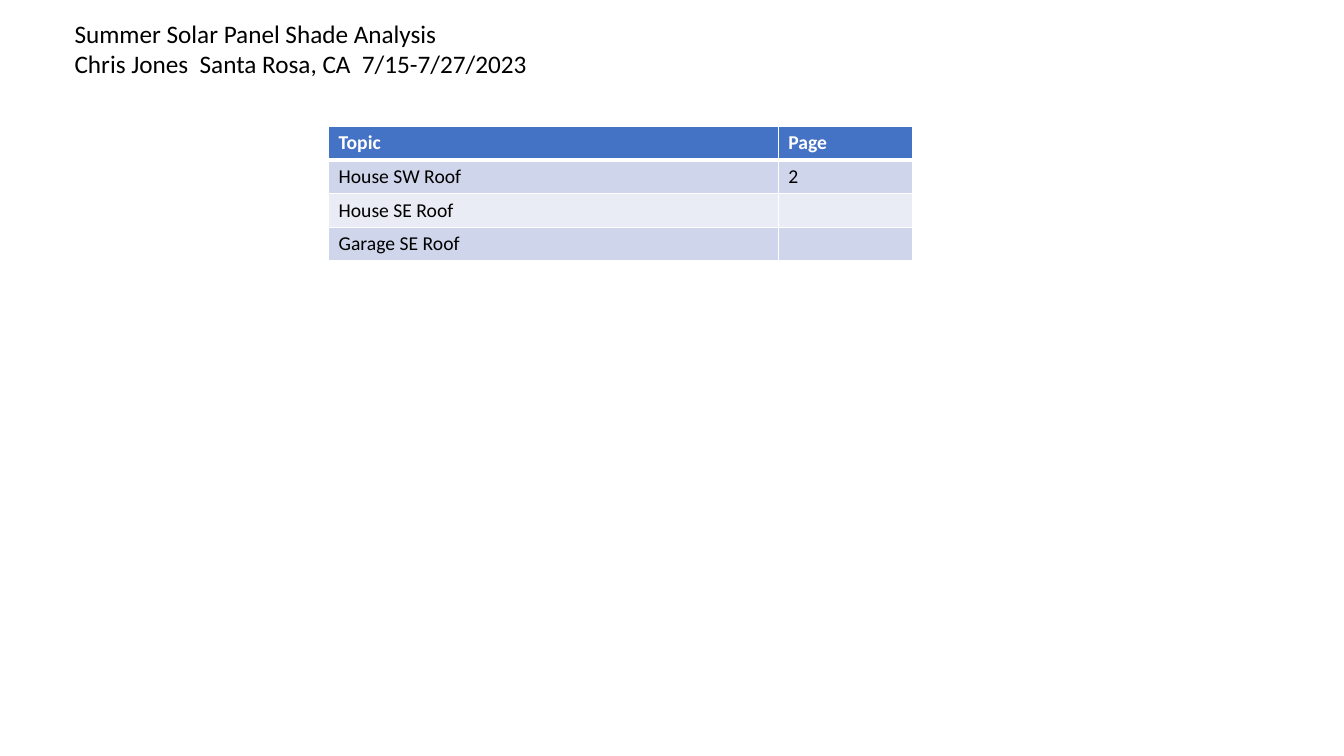
from dataclasses import dataclass

from lxml import etree
from pptx import Presentation, util as u
from pptx.dml.color import RGBColor
from pptx.enum import text
from pptx.oxml import ns


@dataclass(frozen=True)
class Theme:
    font: str = "Calibri"
    title_size: int = 18
    table_size: int = 14
    ink: str = "000000"
    paper: str = "FFFFFF"
    header: str = "4472C4"
    bands: tuple[str, str] = ("CFD5EA", "E9EBF5")
    thin_rule: int = 1
    thick_rule: int = 3


@dataclass(frozen=True)
class Box:
    """A rectangle in inches on the slide."""
    left: float
    top: float
    width: float
    height: float

    def place(self, shape) -> None:
        shape.left, shape.top = u.Inches(self.left), u.Inches(self.top)
        shape.width, shape.height = u.Inches(self.width), u.Inches(self.height)


@dataclass(frozen=True)
class Entry:
    topic: str
    page: str = ""


THEME = Theme()
WIDTH, HEIGHT = 13.33, 7.5
TITLE_BOX = Box(WIDTH * 0.048, HEIGHT * 0.017, WIDTH * 0.558, HEIGHT * 0.095)
TABLE_BOX = Box(WIDTH * 0.2445, HEIGHT * 0.167, WIDTH * 0.4345, HEIGHT * 0.1773)
COLUMN_SHARES = (0.77, 0.23)

TITLE_LINES = (
    "Summer Solar Panel Shade Analysis",
    "Chris Jones  Santa Rosa, CA  7/15-7/27/2023",
)
HEADER = Entry("Topic", "Page")
ENTRIES = (Entry("House SW Roof", "2"), Entry("House SE Roof"), Entry("Garage SE Roof"))


def add_run(paragraph, words: str, size: int, color: str, bold: bool = False) -> None:
    run = paragraph.add_run()
    run.text = words
    run.font.name, run.font.size, run.font.bold = THEME.font, u.Pt(size), bold
    run.font.color.rgb = RGBColor.from_string(color)


def set_border(cell, position: int, side: str, points: int) -> None:
    line = etree.Element(ns.qn(f"a:ln{side}"), w=str(u.Pt(points)))
    fill = etree.SubElement(line, ns.qn("a:solidFill"))
    etree.SubElement(fill, ns.qn("a:srgbClr"), val=THEME.paper)
    cell._tc.get_or_add_tcPr().insert(position, line)


def fill_cell(cell, words: str, row: int) -> None:
    is_header = row == 0
    fill = THEME.header if is_header else THEME.bands[(row - 1) % 2]
    cell.fill.solid()
    cell.fill.fore_color.rgb = RGBColor.from_string(fill)

    # The rule under the header is heavier than the others
    weights = {"L": THEME.thin_rule, "R": THEME.thin_rule,
               "T": THEME.thick_rule if row == 1 else THEME.thin_rule,
               "B": THEME.thick_rule if is_header else THEME.thin_rule}
    for position, (side, points) in enumerate(weights.items()):
        set_border(cell, position, side, points)

    paragraph = cell.text_frame.paragraphs[0]
    if words:
        add_run(paragraph, words, THEME.table_size,
                THEME.paper if is_header else THEME.ink, is_header)
    else:
        # Keeps an empty cell as low as the rest of its row
        etree.SubElement(paragraph._p, ns.qn("a:endParaRPr"), sz=str(THEME.table_size * 100))


def add_title(slide) -> None:
    title = slide.shapes.title
    TITLE_BOX.place(title)
    frame = title.text_frame
    frame.word_wrap = True
    frame.auto_size = text.MSO_AUTO_SIZE.SHAPE_TO_FIT_TEXT
    frame.vertical_anchor = text.MSO_ANCHOR.TOP
    for index, words in enumerate(TITLE_LINES):
        paragraph = frame.add_paragraph() if index else frame.paragraphs[0]
        paragraph.alignment = text.PP_ALIGN.LEFT
        add_run(paragraph, words, THEME.title_size, THEME.ink)


def add_contents_table(slide) -> None:
    rows = (HEADER, *ENTRIES)
    frame = slide.shapes.add_table(len(rows), len(COLUMN_SHARES), 0, 0, 0, 0)
    TABLE_BOX.place(frame)
    table = frame.table
    for column, share in zip(table.columns, COLUMN_SHARES):
        column.width = u.Inches(TABLE_BOX.width * share)
    for index, entry in enumerate(rows):
        table.rows[index].height = u.Inches(TABLE_BOX.height / len(rows))
        for column, words in enumerate((entry.topic, entry.page)):
            fill_cell(table.cell(index, column), words, index)


def main() -> None:
    presentation = Presentation()
    presentation.slide_width, presentation.slide_height = u.Inches(WIDTH), u.Inches(HEIGHT)
    title_only = presentation.slide_layouts[5]
    slide = presentation.slides.add_slide(title_only)
    add_title(slide)
    add_contents_table(slide)
    presentation.save("out.pptx")


if __name__ == "__main__":
    main()
